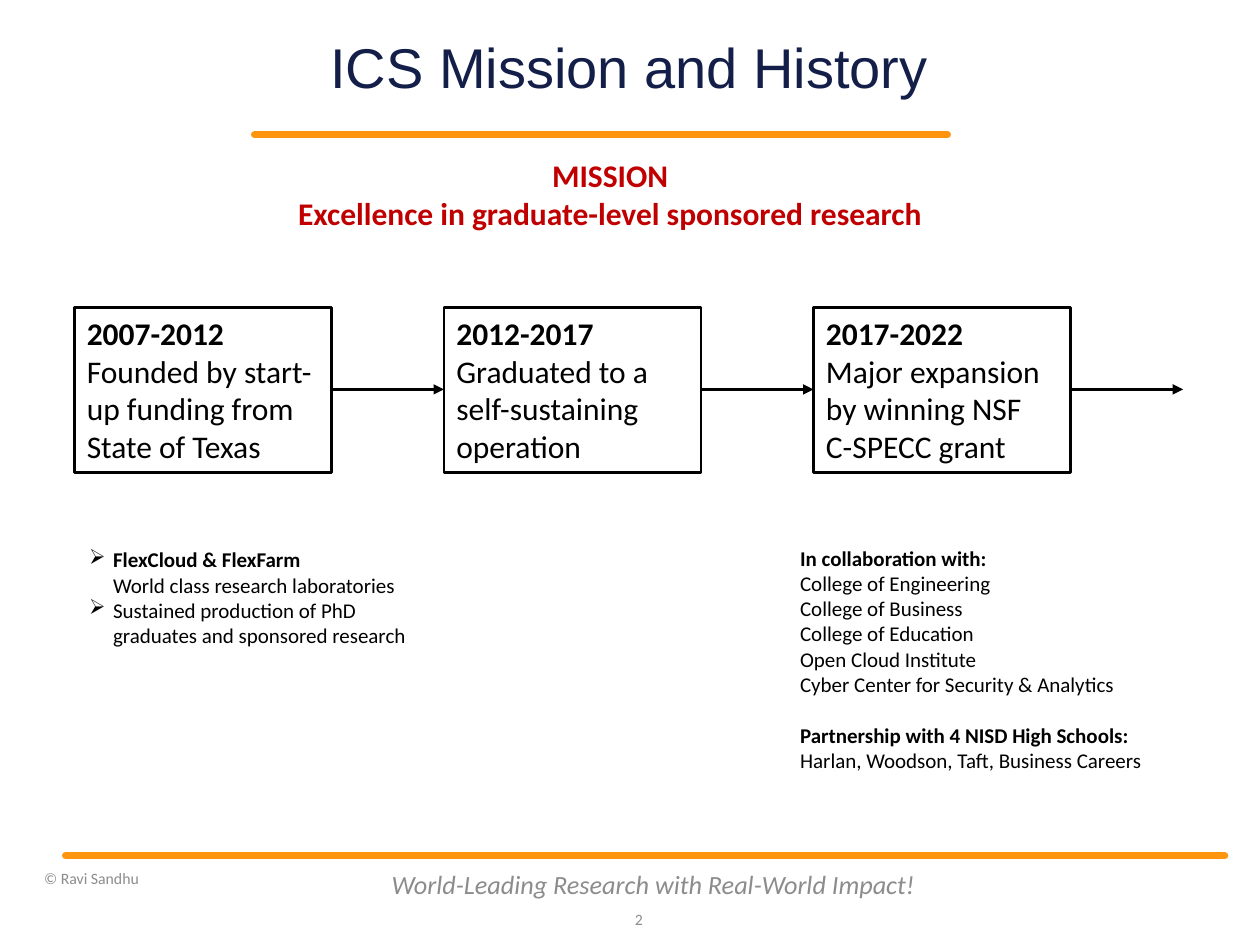
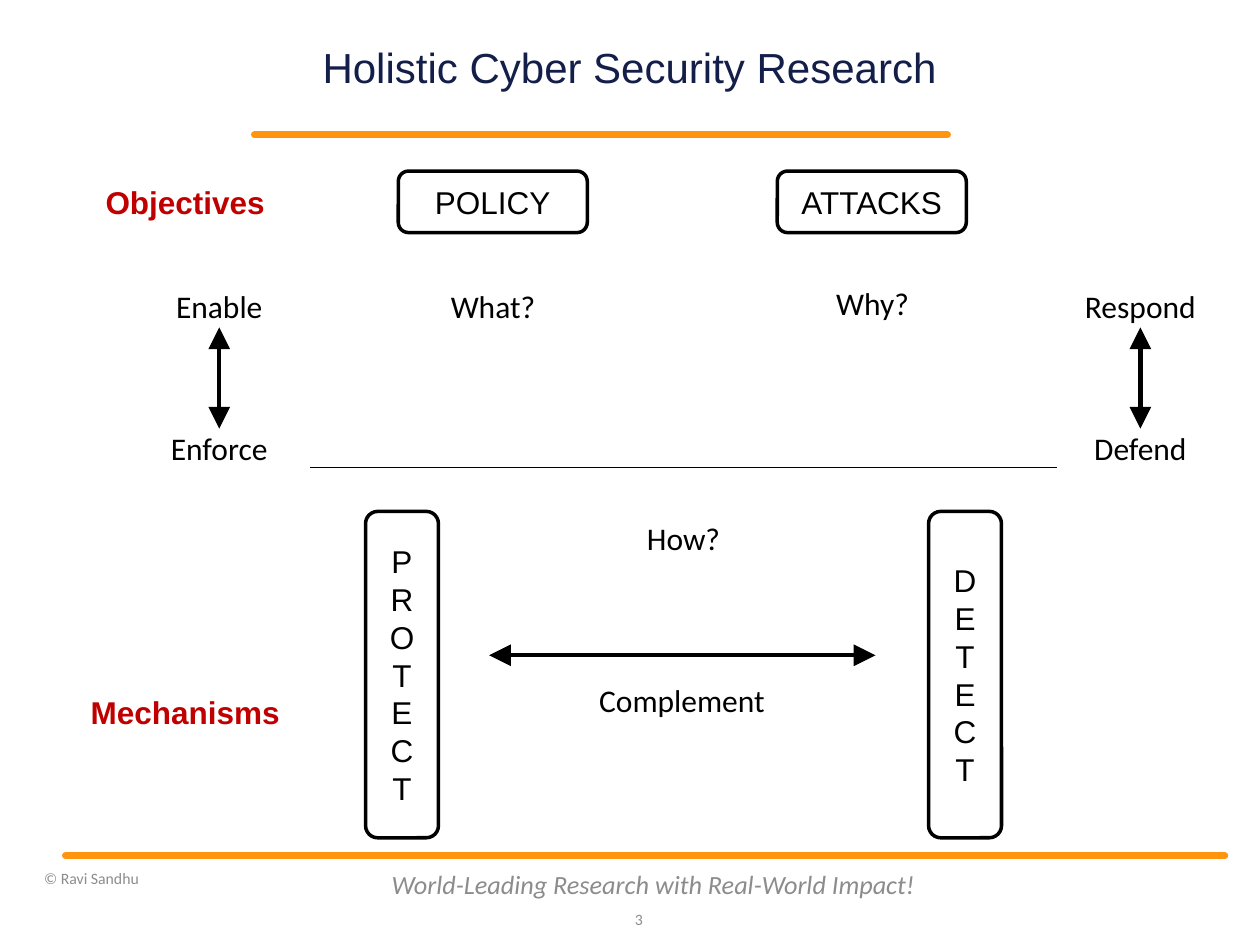
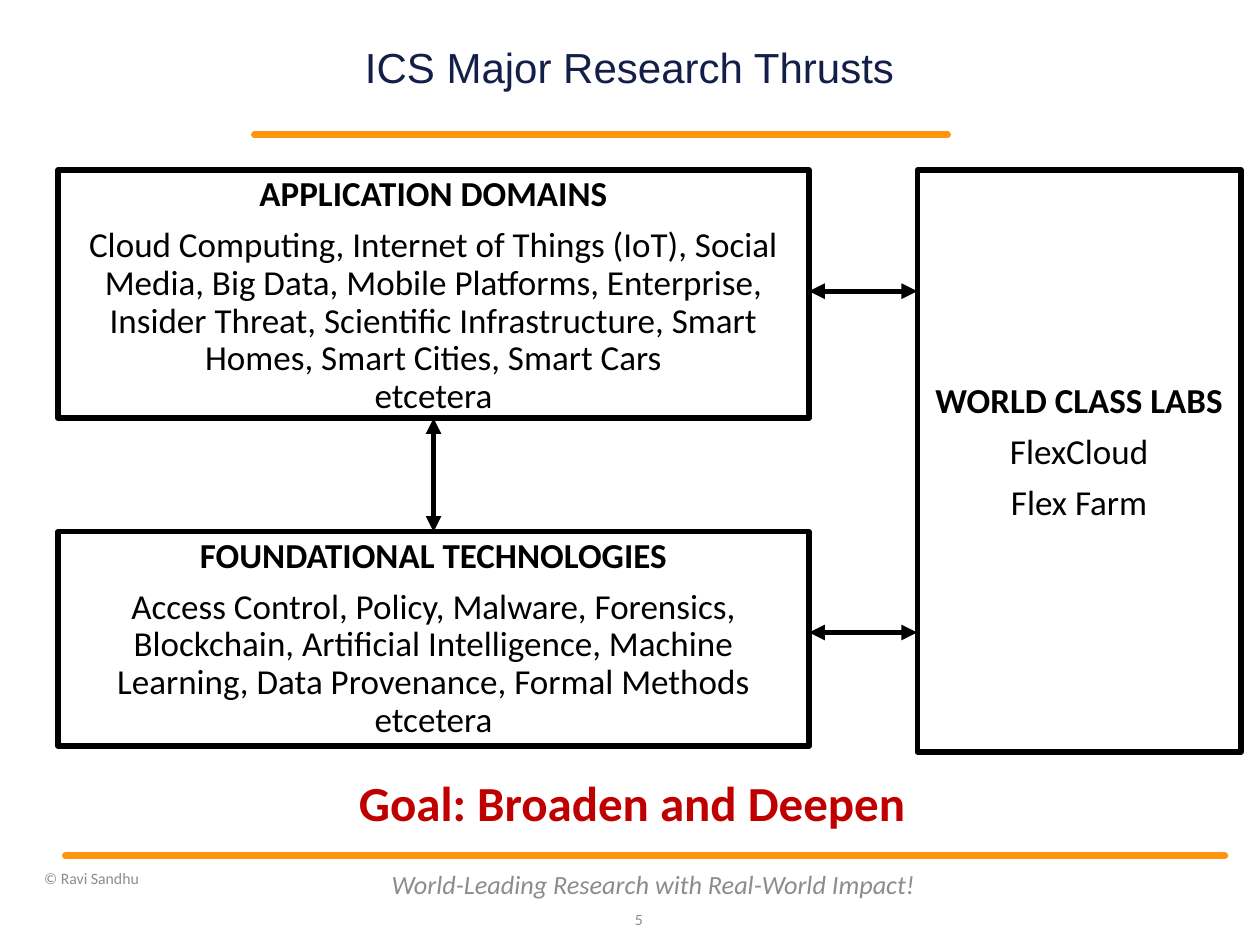
from dataclasses import dataclass

from lxml.etree import SubElement
from pptx import Presentation
from pptx.dml.color import RGBColor
from pptx.enum.shapes import MSO_CONNECTOR, MSO_SHAPE
from pptx.enum.text import MSO_ANCHOR, PP_ALIGN
from pptx.oxml.ns import qn
from pptx.util import Cm, Pt


@dataclass(frozen=True)
class Theme:
    navy: RGBColor = RGBColor(0x13, 0x1F, 0x49)
    orange: RGBColor = RGBColor(0xFF, 0x95, 0x0E)
    red: RGBColor = RGBColor(0xC0, 0x00, 0x00)
    gray: RGBColor = RGBColor(0x8C, 0x8C, 0x8C)
    black: RGBColor = RGBColor(0x00, 0x00, 0x00)
    white: RGBColor = RGBColor(0xFF, 0xFF, 0xFF)
    heading: str = "Arial"
    body: str = "Calibri"
    big_title: int = 32
    goal: int = 28
    title: int = 24
    thrust: int = 20
    text: int = 18
    slogan: int = 15
    detail: int = 12
    footer: int = 9


THEME = Theme()


@dataclass(frozen=True)
class Style:
    size: int = THEME.text
    font: str = THEME.body
    color: RGBColor = THEME.black
    bold: bool = False
    italic: bool = False
    align: PP_ALIGN = PP_ALIGN.LEFT
    line_spacing: float = 1.0
    space_before: float = 0


@dataclass(frozen=True)
class Para:
    """A paragraph; a lead is a bold first line above its text."""
    text: str
    bold: bool = False
    lead: str = ""
    bullet: str = ""
    gap: float = 0


CENTERED = Style(align=PP_ALIGN.CENTER)
DETAIL = Style(size=THEME.detail)
FOOTER = Style(size=THEME.footer, color=THEME.gray)
PAGE_NUMBER = Style(size=THEME.footer, color=THEME.gray, align=PP_ALIGN.RIGHT)
SLOGAN = Style(size=THEME.slogan, color=THEME.gray, italic=True,
               align=PP_ALIGN.CENTER)
MISSION = Style(color=THEME.red, bold=True, align=PP_ALIGN.CENTER)
GOAL = Style(size=THEME.goal, color=THEME.red, bold=True, align=PP_ALIGN.CENTER)
CONCEPT = Style(font=THEME.heading, align=PP_ALIGN.CENTER)
ROW_NAME = Style(font=THEME.heading, color=THEME.red, bold=True,
                 align=PP_ALIGN.CENTER)
THRUST = Style(size=THEME.thrust, align=PP_ALIGN.CENTER, line_spacing=0.9,
               space_before=7.5)


# Text
def add_bullet(paragraph, character):
    properties = paragraph._p.get_or_add_pPr()
    properties.set("marL", str(Cm(0.48)))
    properties.set("indent", str(-Cm(0.48)))
    SubElement(properties, qn("a:buChar")).set("char", character)


def write(frame, paras, style):
    for index, para in enumerate(paras):
        paragraph = frame.paragraphs[0] if index == 0 else frame.add_paragraph()
        paragraph.alignment = style.align
        paragraph.line_spacing = style.line_spacing
        if index:
            paragraph.space_before = Pt(para.gap or style.space_before)
        if para.bullet:
            add_bullet(paragraph, para.bullet)
        if para.lead:
            lead = paragraph.add_run()
            lead.text = para.lead
            lead.font.bold = True
            paragraph.add_line_break()
            paragraph.add_run().text = para.text
        else:
            paragraph.text = para.text
        font = paragraph.font
        font.name, font.size = style.font, Pt(style.size)
        font.bold = style.bold or para.bold
        font.italic = style.italic
        font.color.rgb = style.color


def add_text(slide, box, paras, style, anchor=MSO_ANCHOR.TOP, wrap=True):
    frame = slide.shapes.add_textbox(*map(Cm, box)).text_frame
    frame.word_wrap = wrap
    frame.vertical_anchor = anchor
    write(frame, paras, style)
    return frame


def add_label(slide, text, center, top, width):
    add_text(slide, (center - width / 2, top, width, 1.02), [Para(text)],
             CENTERED, wrap=False)


# Boxes and lines
def add_box(slide, box, paras, style, outline, kind=MSO_SHAPE.RECTANGLE):
    shape = slide.shapes.add_shape(kind, *map(Cm, box))
    shape.shadow.inherit = False
    shape.fill.background()
    if outline:
        shape.line.color.rgb = THEME.black
        shape.line.width = Pt(outline)
    else:
        shape.line.fill.background()
    frame = shape.text_frame
    frame.word_wrap = True
    frame.vertical_anchor = MSO_ANCHOR.TOP
    write(frame, paras, style)
    return shape


def add_concept(slide, text, box, style=CONCEPT, outline=2, stacked=False):
    shape = add_box(slide, box, [Para(text)], style, outline,
                    MSO_SHAPE.ROUNDED_RECTANGLE)
    shape.fill.solid()
    shape.fill.fore_color.rgb = THEME.white
    frame = shape.text_frame
    frame.word_wrap = False
    frame.vertical_anchor = MSO_ANCHOR.MIDDLE
    if stacked:
        frame._txBody.bodyPr.set("vert", "wordArtVert")


def add_line(slide, start, end, width, color=THEME.black, heads=(),
             head_size="med", cap="flat"):
    line = slide.shapes.add_connector(
        MSO_CONNECTOR.STRAIGHT, *map(Cm, (*start, *end)))
    line.line.color.rgb = color
    line.line.width = Pt(width)
    properties = line.element.spPr
    outline = properties.find(qn("a:ln"))
    outline.set("cap", cap)
    for head in heads:
        arrowhead = SubElement(outline, qn(f"a:{head}"))
        arrowhead.set("type", "triangle")
        arrowhead.set("w", head_size)
        arrowhead.set("len", head_size)
    SubElement(properties, qn("a:effectLst"))


def add_double_arrow(slide, start, end, width, head_size="med"):
    add_line(slide, start, end, width, heads=("headEnd", "tailEnd"),
             head_size=head_size)


# Title, bands and footer of every slide
def add_slide(deck, title, number, title_size=THEME.title):
    slide = deck.slides.add_slide(deck.slide_layouts[6])
    for left, right, y in ((5.13, 19.1, 2.72), (1.32, 24.69, 17.25)):
        add_line(slide, (left, y), (right, y), 4, THEME.orange, cap="rnd")
    for text, box, style in (
        ("World-Leading Research with Real-World Impact!",
         (7.62, 17.32, 11.1, 1.02), SLOGAN),
        (str(number), (12.19, 18.03, 1.02, 1.02), PAGE_NUMBER),
        ("© Ravi Sandhu", (0.64, 17.25, 6.99, 0.91), FOOTER),
    ):
        add_text(slide, box, [Para(text)], style, MSO_ANCHOR.MIDDLE)
    title_style = Style(title_size, THEME.heading, THEME.navy,
                        align=PP_ALIGN.CENTER, line_spacing=0.9)
    frame = add_text(slide, (6.02, 0.76, 13.34, 1.3), [Para(title)],
                     title_style, MSO_ANCHOR.MIDDLE)
    frame.margin_left = frame.margin_right = 0
    frame.margin_top = frame.margin_bottom = 0
    return slide


def build_history(deck):
    slide = add_slide(deck, "ICS Mission and History", 2, THEME.big_title)
    add_text(slide, (5.72, 3.02, 13.16, 1.8),
             [Para("MISSION"),
              Para("Excellence in graduate-level sponsored research")],
             MISSION, wrap=False)

    # Timeline
    periods = (
        ("2007-2012", "Founded by start-up funding from State of Texas"),
        ("2012-2017", "Graduated to a self-sustaining operation"),
        ("2017-2022", "Major expansion by winning NSF \vC-SPECC grant"),
    )
    first, step, width = 1.5, 7.45, 5.18
    for index, (years, event) in enumerate(periods):
        left = first + index * step
        add_box(slide, (left, 6.2, width, 3.33),
                [Para(years, bold=True), Para(event)], Style(), 1.5)
        add_line(slide, (left + width, 7.85), (left + step, 7.85), 1.5,
                 heads=("tailEnd",))

    # Achievements and partners
    add_text(slide, (1.55, 10.9, 7.06, 2.31), [
        Para("World class research laboratories", lead="FlexCloud & FlexFarm",
             bullet="➢"),
        Para("Sustained production of PhD graduates and sponsored research",
             bullet="➢"),
    ], DETAIL)
    partners = ("College of Engineering", "College of Business",
                "College of Education", "Open Cloud Institute",
                "Cyber Center for Security & Analytics")
    add_text(slide, (15.88, 10.87, 7.44, 4.88), [
        Para("In collaboration with:", bold=True),
        *map(Para, partners),
        Para("Partnership with 4 NISD High Schools:", bold=True, gap=14.6),
        Para("Harlan, Woodson, Taft, Business Careers"),
    ], DETAIL)


def build_holistic_research(deck):
    slide = add_slide(deck, "Holistic Cyber Security Research", 3)

    # Row names
    for name, top in (("Objectives", 3.45), ("Mechanisms", 13.74)):
        add_concept(slide, name, (1.83, top, 3.81, 1.24), ROW_NAME, outline=0)

    # Objectives
    for objective, left in (("POLICY", 8.03), ("ATTACKS", 15.67)):
        add_concept(slide, objective, (left, 3.45, 3.81, 1.24))
    add_label(slide, "What?", 9.94, 5.66, 2.36)
    add_label(slide, "Why?", 17.59, 5.61, 2.16)

    # Paired actions at the sides
    for upper, lower, x in (("Enable", "Enforce", 4.42),
                            ("Respond", "Defend", 22.99)):
        add_label(slide, upper, x, 5.66, 2.8)
        add_label(slide, lower, x, 8.53, 2.65)
        add_double_arrow(slide, (x, 8.64), (x, 6.6), 2.5, "lg")

    # Mechanisms
    add_line(slide, (6.25, 9.42), (21.31, 9.42), 0.75)
    for mechanism, left in (("PROTECT", 7.37), ("DETECT", 18.72)):
        add_concept(slide, mechanism, (left, 10.31, 1.47, 6.58), stacked=True)
    add_label(slide, "How?", 13.78, 10.34, 2.16)
    add_double_arrow(slide, (9.86, 13.21), (17.65, 13.21), 2.5, "lg")
    add_label(slide, "Complement", 13.75, 13.61, 4.14)


def build_thrusts(deck):
    slide = add_slide(deck, "ICS Major Research Thrusts", 5)

    # Research areas
    areas = (
        ("APPLICATION DOMAINS", 3.43, 5.0, 3.25,
         "Cloud Computing, Internet of Things (IoT), Social Media, Big Data, "
         "Mobile Platforms, Enterprise, Insider Threat, Scientific "
         "Infrastructure, Smart Homes, Smart Cities, Smart Cars\vetcetera"),
        ("FOUNDATIONAL TECHNOLOGIES", 10.72, 4.32, 3,
         "Access Control, Policy, Malware, Forensics, Blockchain, Artificial "
         "Intelligence, Machine Learning, Data Provenance, Formal Methods"
         "\vetcetera"),
    )
    for name, top, height, outline, topics in areas:
        add_box(slide, (1.17, top, 15.14, height),
                [Para(name, bold=True), Para(topics)], THRUST, outline)

    # Laboratories
    labs = add_box(slide, (18.49, 3.43, 6.53, 11.73),
                   [Para("WORLD CLASS LABS", bold=True), Para("FlexCloud"),
                    Para("Flex Farm")], THRUST, 3)
    labs.text_frame.margin_top = Cm(4.3)

    # Links between the areas and the laboratories
    add_double_arrow(slide, (8.74, 8.43), (8.74, 10.72), 3)
    for y in (5.87, 12.75):
        add_double_arrow(slide, (18.49, y), (16.31, y), 3)

    add_text(slide, (6.91, 15.44, 11.66, 1.45),
             [Para("Goal: Broaden and Deepen")], GOAL, wrap=False)


def main():
    deck = Presentation()
    deck.slide_width, deck.slide_height = Cm(25.4), Cm(19.05)
    build_history(deck)
    build_holistic_research(deck)
    build_thrusts(deck)
    deck.save("out.pptx")


if __name__ == "__main__":
    main()
